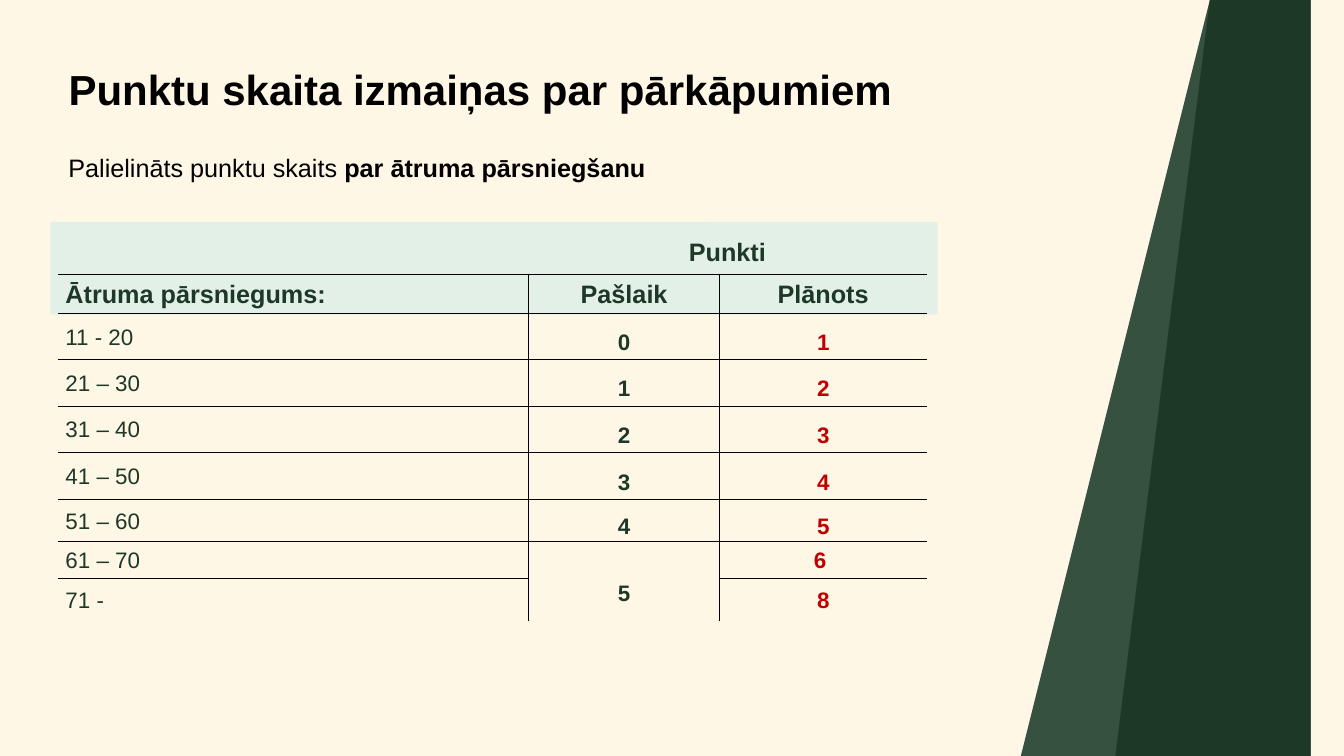
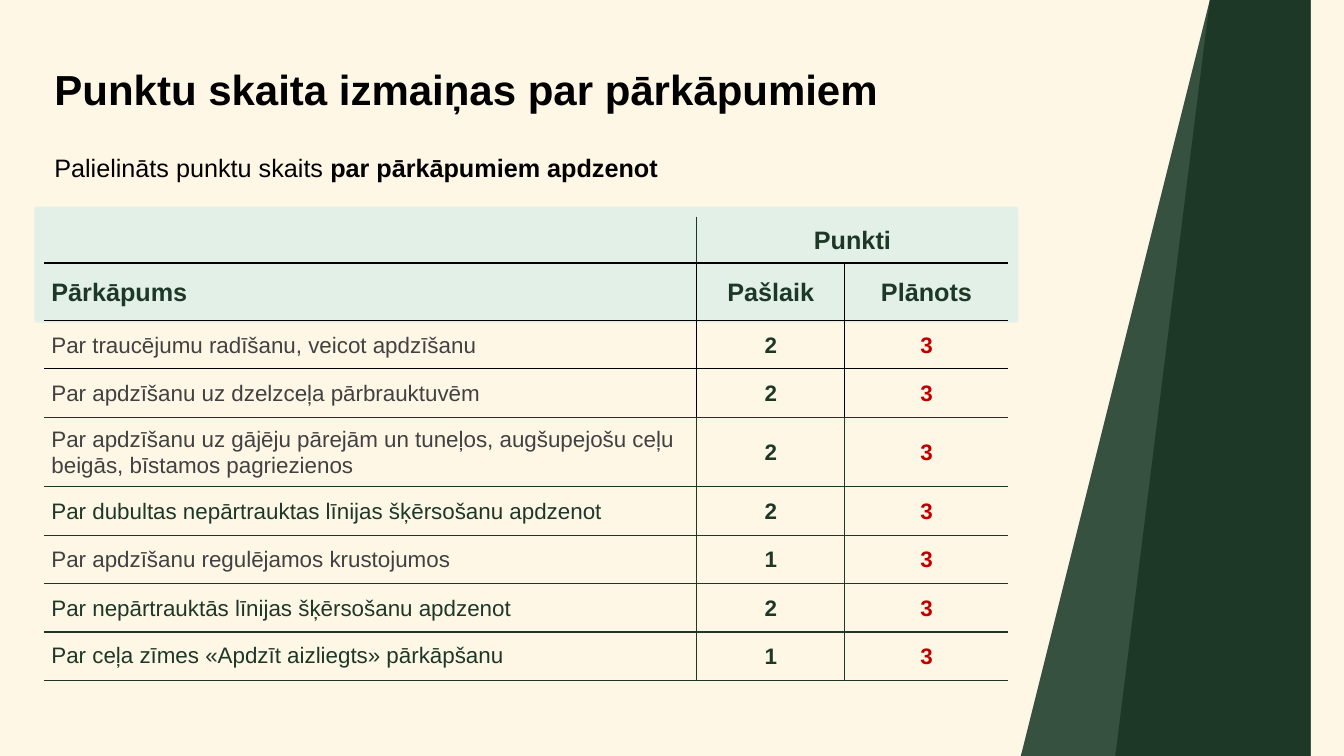
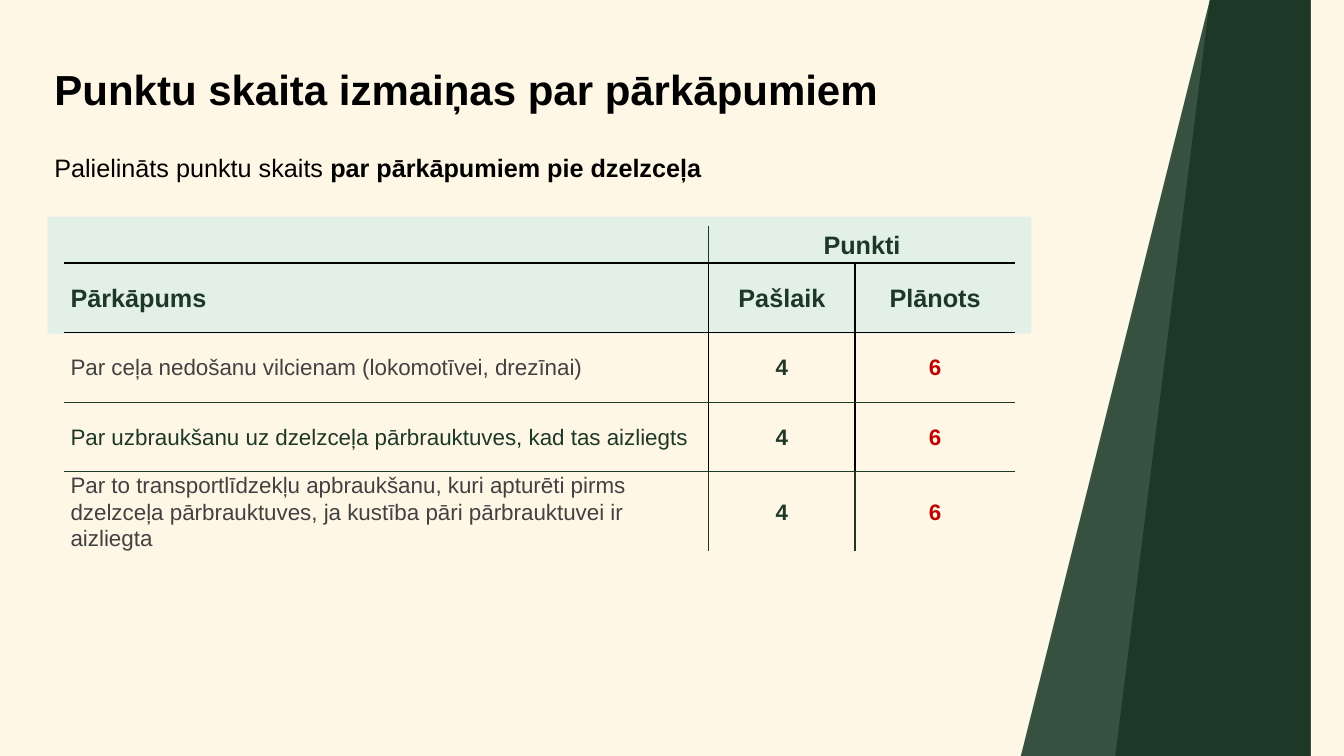
from dataclasses import dataclass
from typing import Optional

import pptx
import pptx.dml.color
import pptx.enum.shapes
import pptx.enum.text
import pptx.oxml
import pptx.oxml.ns
import pptx.util
from pptx.util import Inches

FONT = "Arial"
CREAM, MINT = "FFF7E6", "E3F0E8"
MID_GREEN, DARK_GREEN = "365140", "1E3828"
BLACK, GREY, RED = "000000", "414142", "C00000"
TITLE = "Punktu skaita izmaiņas par pārkāpumiem"
LEAD = "Palielināts punktu skaits "
SIDE_BANDS = [
    (MID_GREEN, [(11.56, 0), (10.35, 7.5), (13.33, 7.5), (13.33, 0)]),
    (DARK_GREEN, [(12.39, 0), (11.18, 7.5), (13.33, 7.5), (13.33, 0)]),
]
ALIGN = pptx.enum.text.PP_ALIGN


@dataclass
class Row:
    height: float
    texts: tuple[str, str, str]
    label_color: str = DARK_GREEN
    below: Optional[str] = BLACK
    upright: Optional[str] = BLACK
    spacings: tuple[float, float, float] = (1.07, 1.07, 1.07)


@dataclass
class PointsSlide:
    topic: str
    text_left: float
    panel: tuple[float, float, float, float]
    table_at: tuple[float, float]
    columns: tuple[float, float, float]
    rows: list[Row]
    shared_row: Optional[int] = None  # its middle cell also covers the next row


def rgb(color: str) -> pptx.dml.color.RGBColor:
    return pptx.dml.color.RGBColor.from_string(color)


def header(heights: tuple[float, float], label: str, upright: Optional[str]) -> list[Row]:
    return [
        Row(heights[0], ("", "Punkti", ""), upright=upright),
        Row(heights[1], (label, "Pašlaik", "Plānots")),
    ]


def format_run(run, size: float, color: str, bold: bool) -> None:
    run.font.name = FONT
    run.font.size = pptx.util.Pt(size)
    run.font.bold = bold
    run.font.color.rgb = rgb(color)


def fill_plain(shape, color: str) -> None:
    shape.shadow.inherit = False
    shape.fill.solid()
    shape.fill.fore_color.rgb = rgb(color)
    shape.line.fill.background()


def move_bands_to_layout(slide) -> None:
    """Draw the side bands once and hand them to the slide's layout."""
    for order, (color, corners) in enumerate(SIDE_BANDS):
        outline = slide.shapes.build_freeform(*corners[0], scale=Inches(1))
        outline.add_line_segments(corners[1:], close=True)
        band = outline.convert_to_shape()
        fill_plain(band, color)
        band.element.xpath(".//p:cNvPr")[0].set("id", str(100 + order))
        slide.slide_layout.shapes.element.insert(2 + order, band.element)


def add_headings(slide, page: PointsSlide) -> None:
    title = slide.shapes.title
    title.left, title.top = Inches(page.text_left), Inches(0.64)
    title.width, title.height = Inches(10.34), Inches(1.15)
    title.text_frame.text = TITLE
    title.text_frame.auto_size = pptx.enum.text.MSO_AUTO_SIZE.NONE
    title.text_frame.vertical_anchor = pptx.enum.text.MSO_ANCHOR.TOP
    heading = title.text_frame.paragraphs[0]
    heading.alignment = ALIGN.LEFT
    heading.line_spacing = 0.9
    format_run(heading.runs[0], 30, BLACK, True)

    subtitle = slide.shapes.add_textbox(
        Inches(page.text_left), Inches(1.46), Inches(6.67), Inches(0.4))
    subtitle.text_frame.word_wrap = True
    sentence = subtitle.text_frame.paragraphs[0]
    for words, bold in ((LEAD, False), (page.topic, True)):
        run = sentence.add_run()
        run.text = words
        format_run(run, 18, BLACK, bold)


def set_borders(cell, colors: dict[str, Optional[str]]) -> None:
    properties = cell._tc.get_or_add_tcPr()
    for side, color in colors.items():
        paint = (f'<a:solidFill><a:srgbClr val="{color}"/></a:solidFill>'
                 if color else "<a:noFill/>")
        properties.append(pptx.oxml.parse_xml(
            f'<a:ln{side} {pptx.oxml.ns.nsdecls("a")} w="12700">{paint}</a:ln{side}>'))


def write_cell(cell, row: Row, column: int, is_header: bool) -> None:
    cell.margin_left = cell.margin_right = Inches(0.07)
    cell.margin_top = cell.margin_bottom = 0
    cell.vertical_anchor = pptx.enum.text.MSO_ANCHOR.MIDDLE
    cell.fill.background()
    if not row.texts[column]:
        return
    cell.text_frame.text = row.texts[column]
    entry = cell.text_frame.paragraphs[0]
    entry.alignment = ALIGN.CENTER if column else ALIGN.LEFT
    entry.line_spacing = row.spacings[column]
    entry.space_after = pptx.util.Pt(8)
    if is_header:
        format_run(entry.runs[0], 18, DARK_GREEN, True)
    else:
        color = (row.label_color, DARK_GREEN, RED)[column]
        format_run(entry.runs[0], 16, color, column > 0)


def add_points_table(slide, page: PointsSlide) -> None:
    rows = page.rows
    left, top = page.table_at
    table = slide.shapes.add_table(
        len(rows), len(page.columns), Inches(left), Inches(top),
        Inches(sum(page.columns)), Inches(sum(row.height for row in rows))).table
    table.first_row = table.horz_banding = False
    for column, width in zip(table.columns, page.columns):
        column.width = Inches(width)

    def below(r: int, c: int) -> Optional[str]:
        if r < 0 or (r == page.shared_row and c == 1):
            return None
        return rows[r].below

    def right_of(r: int, c: int) -> Optional[str]:
        if c not in (0, 1) or (r == 0 and c == 1):
            return None
        return rows[r].upright

    table.cell(0, 1).merge(table.cell(0, 2))
    if page.shared_row is not None:
        table.cell(page.shared_row, 1).merge(table.cell(page.shared_row + 1, 1))
    for r, row in enumerate(rows):
        table.rows[r].height = Inches(row.height)
        for c in range(len(page.columns)):
            cell = table.cell(r, c)
            set_borders(cell, {"L": right_of(r, c - 1), "R": right_of(r, c),
                               "T": below(r - 1, c), "B": below(r, c)})
            write_cell(cell, row, c, r < 2)


def add_panel(slide, page: PointsSlide) -> None:
    panel = slide.shapes.add_shape(
        pptx.enum.shapes.MSO_SHAPE.ROUNDED_RECTANGLE, *map(Inches, page.panel))
    panel.adjustments[0] = 0.02
    fill_plain(panel, MINT)


LOOSE = (1.07, 1.5, 1.5)
PAGES = [
    PointsSlide(
        "par ātruma pārsniegšanu", 0.58, (0.5, 2.2, 8.8, 0.92),
        (0.58, 2.28), (4.66, 1.9, 2.05),
        header((0.44, 0.39), "Ātruma pārsniegums:", None) + [
            Row(0.46, ("11 - 20", "0", "1"), spacings=LOOSE),
            Row(0.46, ("21 – 30", "1", "2"), spacings=LOOSE),
            Row(0.46, ("31 – 40", "2", "3"), spacings=LOOSE),
            Row(0.47, ("41 – 50", "3", "4"), spacings=LOOSE),
            Row(0.41, ("51 – 60", "4", "5"), spacings=LOOSE),
            Row(0.37, ("61 – 70", "5", "6 "), spacings=(1.07, 2, 1.07)),
            Row(0.42, ("71 -", "", "8"), below=None),
        ], shared_row=7),
    PointsSlide(
        "par pārkāpumiem apdzenot", 0.44, (0.34, 2.05, 9.76, 1.15),
        (0.44, 2.15), (6.47, 1.47, 1.62),
        header((0.46, 0.57), "Pārkāpums", DARK_GREEN) + [
            Row(0.48, ("Par traucējumu radīšanu, veicot apdzīšanu", "2", "3"), GREY),
            Row(0.48, ("Par apdzīšanu uz dzelzceļa pārbrauktuvēm", "2", "3"),
                GREY, DARK_GREEN),
            Row(0.69, ("Par apdzīšanu uz gājēju pārejām un tuneļos, augšupejošu ceļu "
                       "beigās, bīstamos pagriezienos", "2", "3"),
                GREY, DARK_GREEN, DARK_GREEN),
            Row(0.48, ("Par dubultas nepārtrauktas līnijas šķērsošanu apdzenot", "2", "3"),
                DARK_GREEN, DARK_GREEN, DARK_GREEN),
            Row(0.48, ("Par apdzīšanu regulējamos krustojumos", "1", "3"),
                GREY, DARK_GREEN, DARK_GREEN),
            Row(0.48, ("Par nepārtrauktās līnijas šķērsošanu apdzenot", "2", "3"),
                DARK_GREEN, DARK_GREEN, DARK_GREEN),
            Row(0.48, ("Par ceļa zīmes «Apdzīt aizliegts» pārkāpšanu", "1", "3"),
                DARK_GREEN, DARK_GREEN, DARK_GREEN, (1, 1.07, 1.07)),
        ]),
    PointsSlide(
        "par pārkāpumiem pie dzelzceļa", 0.44, (0.47, 2.15, 9.76, 1.16),
        (0.63, 2.24), (6.4, 1.45, 1.59),
        header((0.37, 0.69), "Pārkāpums", DARK_GREEN) + [
            Row(0.69, ("Par ceļa nedošanu vilcienam (lokomotīvei, drezīnai)", "4", "6"),
                GREY, DARK_GREEN),
            Row(0.69, ("Par uzbraukšanu uz dzelzceļa pārbrauktuves, kad tas aizliegts",
                       "4", "6"), DARK_GREEN, DARK_GREEN),
            Row(0.69, ("Par to transportlīdzekļu apbraukšanu, kuri apturēti pirms "
                       "dzelzceļa pārbrauktuves, ja kustība pāri pārbrauktuvei ir "
                       "aizliegta", "4", "6"), GREY, None, DARK_GREEN),
        ]),
]


def main() -> None:
    deck = pptx.Presentation()
    deck.slide_width, deck.slide_height = Inches(13.33), Inches(7.5)
    backdrop = deck.slide_master.background.fill
    backdrop.solid()
    backdrop.fore_color.rgb = rgb(CREAM)
    title_only = deck.slide_layouts[5]
    for number, page in enumerate(PAGES):
        slide = deck.slides.add_slide(title_only)
        if number == 0:
            move_bands_to_layout(slide)
        add_panel(slide, page)
        add_points_table(slide, page)
        add_headings(slide, page)
    deck.save("out.pptx")


if __name__ == "__main__":
    main()
